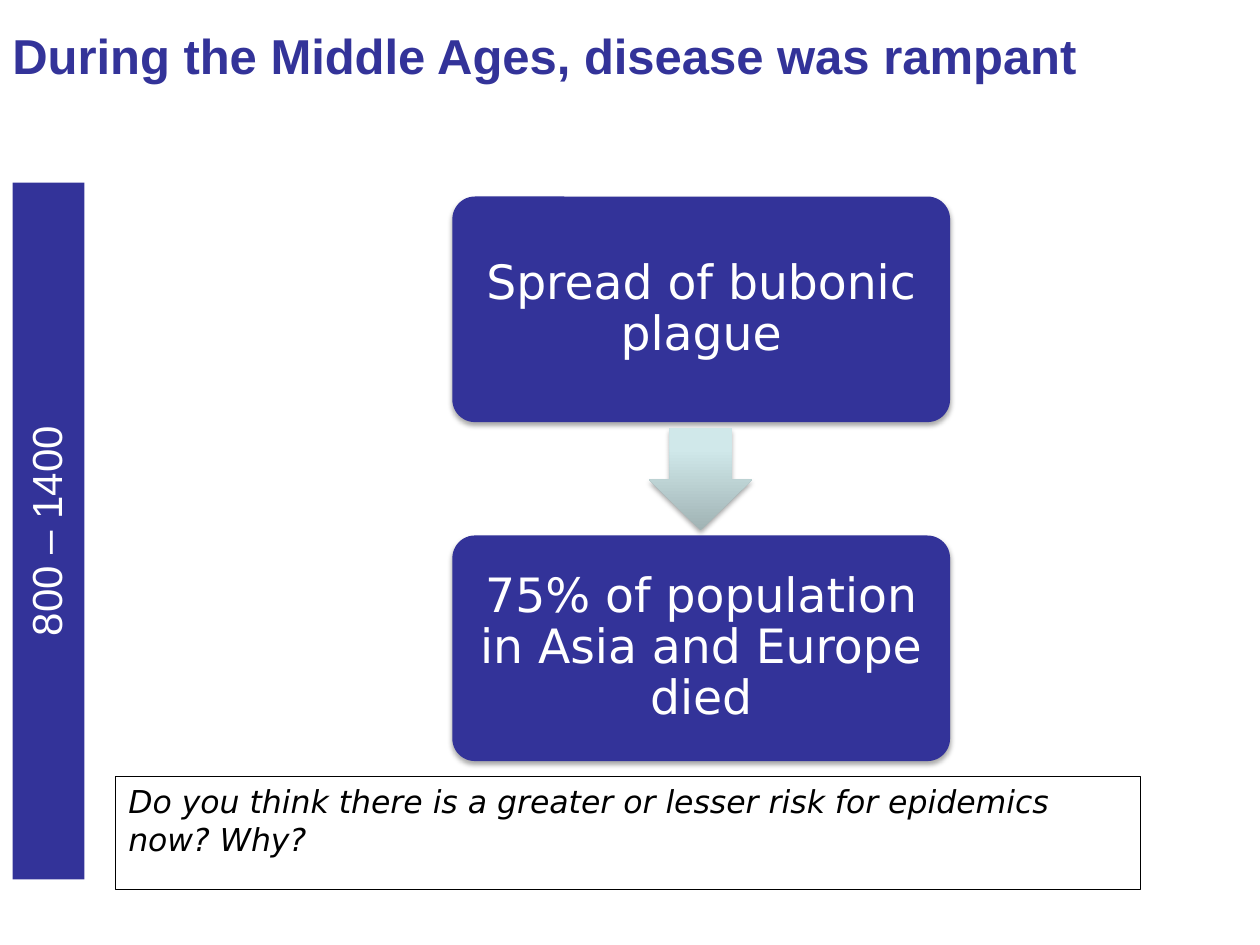
from dataclasses import dataclass
from lxml import etree
from pptx import Presentation
from pptx.dml.color import RGBColor
from pptx.enum.shapes import MSO_SHAPE
from pptx.enum.text import MSO_ANCHOR, PP_ALIGN
from pptx.oxml import parse_xml
from pptx.oxml.ns import nsdecls, qn
from pptx.util import Inches, Pt

NAVY, WHITE, BLACK = "333399", "FFFFFF", "000000"


@dataclass
class Area:
    left: float
    top: float
    width: float
    height: float


@dataclass
class Step:
    text: str
    top: float


def color(code: str) -> RGBColor:
    return RGBColor.from_string(code)


def add_shape(slide, kind, area: Area, fill: str = ""):
    """Add a flat shape with no outline and an optional fill."""
    shape = slide.shapes.add_shape(
        kind, Inches(area.left), Inches(area.top),
        Inches(area.width), Inches(area.height))
    shape.shadow.inherit = False
    shape.line.fill.background()
    if fill:
        shape.fill.solid()
        shape.fill.fore_color.rgb = color(fill)
    else:
        shape.fill.background()
    return shape


def add_shade(shape) -> None:
    """Give a shape a soft shadow just below it."""
    effect = shape._element.spPr.find(qn("a:effectLst"))
    effect.append(parse_xml(
        f'<a:outerShdw {nsdecls("a")} blurRad="{Pt(3.1)}" dist="{Pt(1.8)}"'
        ' dir="5400000" rotWithShape="0"><a:srgbClr val="000000">'
        '<a:alpha val="35000"/></a:srgbClr></a:outerShdw>'))


def set_text(shape, text: str, size: float, face: str, ink: str,
             align=PP_ALIGN.LEFT, anchor=MSO_ANCHOR.TOP, space: float = 1.0,
             bold: bool = False, italic: bool = False):
    frame = shape.text_frame
    frame.word_wrap = True
    frame.vertical_anchor = anchor
    frame.text = text
    line = frame.paragraphs[0]
    line.alignment = align
    line.line_spacing = space
    font = line.runs[0].font
    font.size, font.name = Pt(size), face
    font.bold, font.italic = bold, italic
    font.color.rgb = color(ink)
    return frame


def add_step(slide, step: Step) -> None:
    box = add_shape(slide, MSO_SHAPE.ROUNDED_RECTANGLE,
                    Area(3.59, step.top, 3.95, 1.79), NAVY)
    box.adjustments[0] = 0.1
    add_shade(box)
    frame = set_text(box, step.text, 27, "DejaVu Sans", WHITE,
                     PP_ALIGN.CENTER, MSO_ANCHOR.MIDDLE, 0.9)
    frame.margin_left = frame.margin_right = Inches(0.16)


def add_arrow(slide, area: Area) -> None:
    arrow = add_shape(slide, MSO_SHAPE.DOWN_ARROW, area)
    arrow.adjustments[0], arrow.adjustments[1] = 0.6, 0.5
    add_shade(arrow)
    # Three-stop fade, darkest at the tip
    arrow.fill.gradient()
    grad = arrow._element.spPr.find(qn("a:gradFill"))
    stops = grad.find(qn("a:gsLst"))
    for stop in list(stops):
        stops.remove(stop)
    for place, code in ((0, "A0B3B4"), (80, "D0E8EA"), (100, "D0EAEC")):
        stop = etree.SubElement(stops, qn("a:gs"), pos=str(place * 1000))
        etree.SubElement(stop, qn("a:srgbClr"), val=code)
    grad.find(qn("a:lin")).set("ang", "16200000")


def main() -> None:
    deck = Presentation()
    deck.slide_width, deck.slide_height = Inches(10), Inches(7.5)
    slide = deck.slides.add_slide(deck.slide_layouts[6])

    # Cause and effect
    add_step(slide, Step("Spread of bubonic plague", 1.56))
    add_arrow(slide, Area(5.15, 3.4, 0.82, 0.81))
    add_step(slide, Step("75% of population in Asia and Europe died", 4.25))

    # Title
    title = slide.shapes.add_textbox(
        Inches(0), Inches(0.1), Inches(9.65), Inches(0.86))
    frame = set_text(title, "During the Middle Ages, disease was rampant",
                     28, "Arial", NAVY, bold=True)
    frame.margin_top = Inches(0.1)

    # Question
    quiz = add_shape(slide, MSO_SHAPE.RECTANGLE, Area(0.92, 6.16, 8.13, 0.9))
    quiz.line.color.rgb = color(BLACK)
    quiz.line.width = Pt(0.5)
    set_text(quiz, "Do you think there is a greater or lesser risk for "
             "epidemics now? Why?", 18, "DejaVu Sans", BLACK, italic=True)

    # Period bar, read upward
    bar = add_shape(slide, MSO_SHAPE.RECTANGLE,
                    Area(0.1, 1.45, 0.57, 5.53), NAVY)
    frame = set_text(bar, "800 – 1400", 24, "Arial", WHITE,
                     PP_ALIGN.CENTER, MSO_ANCHOR.MIDDLE, 0.9)
    frame._txBody.bodyPr.set("vert", "vert270")

    deck.save("out.pptx")


if __name__ == "__main__":
    main()
